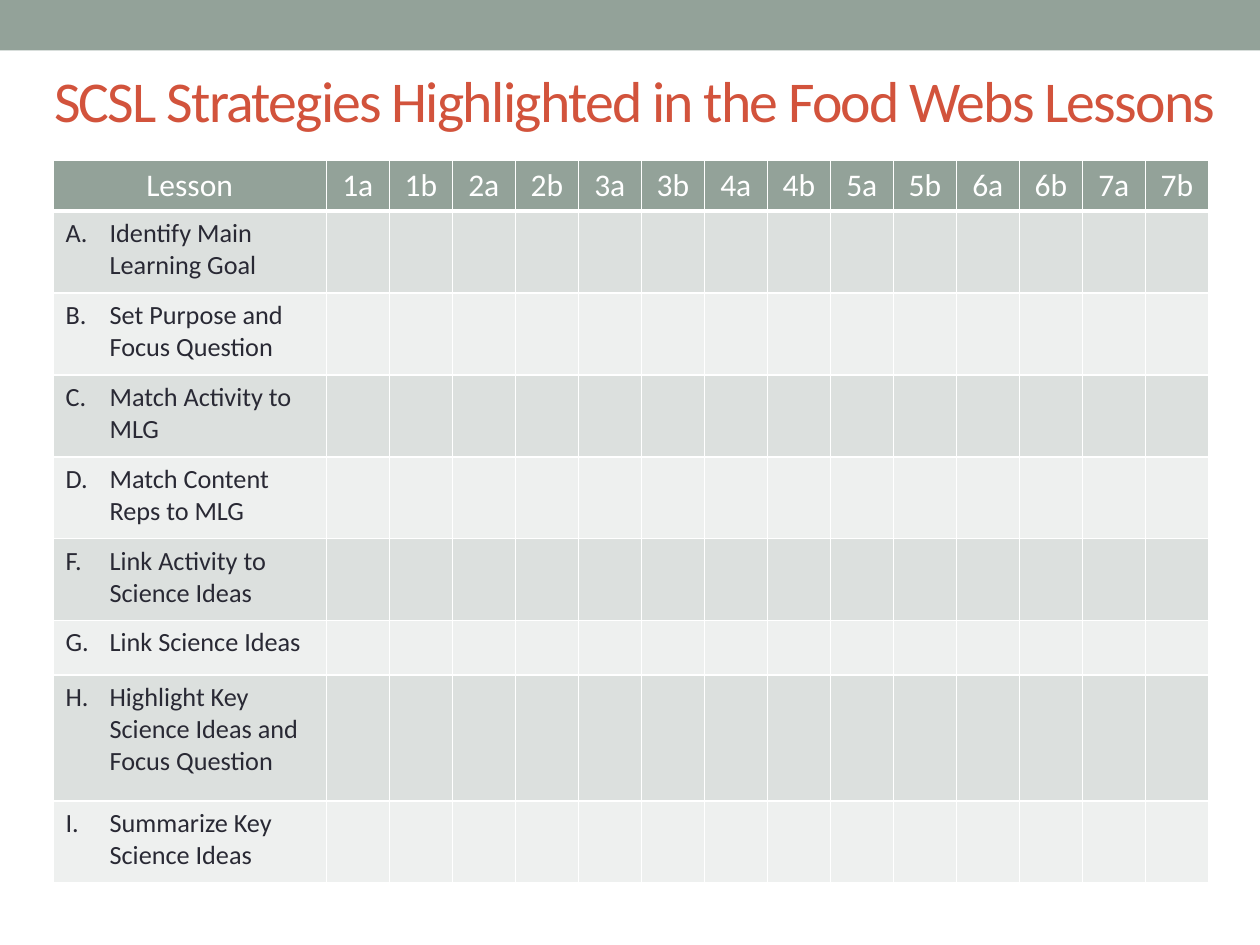
import pptx
import pptx.dml.color
import pptx.enum.shapes
import pptx.enum.text
import pptx.oxml.ns
import pptx.util
from lxml import etree

Inches = pptx.util.Inches
Pt = pptx.util.Pt
qn = pptx.oxml.ns.qn
PP_ALIGN = pptx.enum.text.PP_ALIGN
MSO_ANCHOR = pptx.enum.text.MSO_ANCHOR

COLORS = {
    "sage": "93A299",
    "band_dark": "DCE0DE",
    "band_light": "EEF0EF",
    "title": "D2533C",
    "ink": "292934",
    "white": "FFFFFF",
}
LESSONS = [f"{n}{part}" for n in range(1, 8) for part in "ab"]
# Letter, strategy, row height
STRATEGIES = [
    ("A.", "Identify Main Learning Goal", 0.65),
    ("B.", "Set Purpose and Focus Question", 0.65),
    ("C.", "Match Activity to MLG", 0.65),
    ("D.", "Match Content Reps to MLG", 0.65),
    ("F.", "Link Activity to Science Ideas", 0.65),
    ("G.", "Link Science Ideas", 0.43),
    ("H.", "Highlight Key Science Ideas and Focus Question", 1),
    ("I.", "Summarize Key Science Ideas", 0.65),
]


class Deck:
    """Holds the style and the current slide."""

    font = "Calibri"

    def __init__(self, prs):
        self.s = prs.slides.add_slide(prs.slide_layouts[5])

    def color(self, name):
        return pptx.dml.color.RGBColor.from_string(COLORS[name])

    def fill(self, target, name):
        target.fill.solid()
        target.fill.fore_color.rgb = self.color(name)

    def format(self, p, size, color, align=PP_ALIGN.LEFT):
        p.alignment = align
        for r in p.runs:
            r.font.name = self.font
            r.font.size = Pt(size)
            r.font.bold = False
            r.font.color.rgb = self.color(color)

    def bar(self, left, top, width, height, color):
        sp = self.s.shapes.add_shape(
            pptx.enum.shapes.MSO_SHAPE.RECTANGLE,
            Inches(left), Inches(top), Inches(width), Inches(height))
        sp.shadow.inherit = False
        self.fill(sp, color)
        sp.line.fill.background()
        # Send behind the title
        self.s.shapes._spTree.insert(2, sp._element)

    def title(self, text, left, top, width, height):
        sp = self.s.shapes.title
        sp.left, sp.top = Inches(left), Inches(top)
        sp.width, sp.height = Inches(width), Inches(height)
        tf = sp.text_frame
        tf.text = text
        tf.auto_size = pptx.enum.text.MSO_AUTO_SIZE.NONE
        tf.vertical_anchor = MSO_ANCHOR.MIDDLE
        p = tf.paragraphs[0]
        self.format(p, 33, "title")
        p.runs[0].font._element.set("spc", "-100")

    def borders(self, cell, bottom=1):
        tcPr = cell._tc.get_or_add_tcPr()
        for side, width in (("L", 1), ("R", 1), ("T", 1), ("B", bottom)):
            ln = etree.SubElement(tcPr, qn(f"a:ln{side}"), w=str(Pt(width)))
            line_fill = etree.SubElement(ln, qn("a:solidFill"))
            etree.SubElement(line_fill, qn("a:srgbClr"), val=COLORS["white"])

    def header_cell(self, cell, text):
        self.borders(cell, bottom=3)
        self.fill(cell, "sage")
        cell.text = text
        cell.vertical_anchor = MSO_ANCHOR.MIDDLE
        self.format(cell.text_frame.paragraphs[0], 18, "white", PP_ALIGN.CENTER)

    def strategy_cell(self, cell, letter, text):
        cell.text_frame.text = f"{letter}\t{text}"
        p = cell.text_frame.paragraphs[0]
        self.format(p, 15, "ink")
        # Hanging indent: the tab stops at the left margin
        pPr = p._p.get_or_add_pPr()
        pPr.set("marL", str(Inches(0.35)))
        pPr.set("indent", str(-Inches(0.35)))

    def strategy_table(self, left, top, first_width, lesson_width, header_height):
        widths = [first_width] + [lesson_width] * len(LESSONS)
        heights = [header_height] + [height for _, _, height in STRATEGIES]
        table = self.s.shapes.add_table(
            len(heights), len(widths), Inches(left), Inches(top),
            Inches(sum(widths)), Inches(sum(heights))).table
        table.horz_banding = False
        for column, width in zip(table.columns, widths):
            column.width = Inches(width)
        for row, height in zip(table.rows, heights):
            row.height = Inches(height)

        # Header row
        for col, text in enumerate(["Lesson"] + LESSONS):
            self.header_cell(table.cell(0, col), text)

        # One banded row per strategy
        for row, (letter, text, _) in enumerate(STRATEGIES, start=1):
            for col in range(len(widths)):
                cell = table.cell(row, col)
                self.borders(cell)
                self.fill(cell, "band_dark" if row % 2 else "band_light")
            self.strategy_cell(table.cell(row, 0), letter, text)


def main():
    prs = pptx.Presentation()
    prs.slide_width, prs.slide_height = Inches(10), Inches(7.5)
    deck = Deck(prs)
    deck.bar(0, 0, 10, 0.4, "sage")
    deck.title("SCSL Strategies Highlighted in the Food Webs Lessons",
               0.33, 0.25, 9.42, 1.08)
    deck.strategy_table(0.42, 1.27, 2.17, 0.5, 0.4)
    prs.save("out.pptx")


if __name__ == "__main__":
    main()
